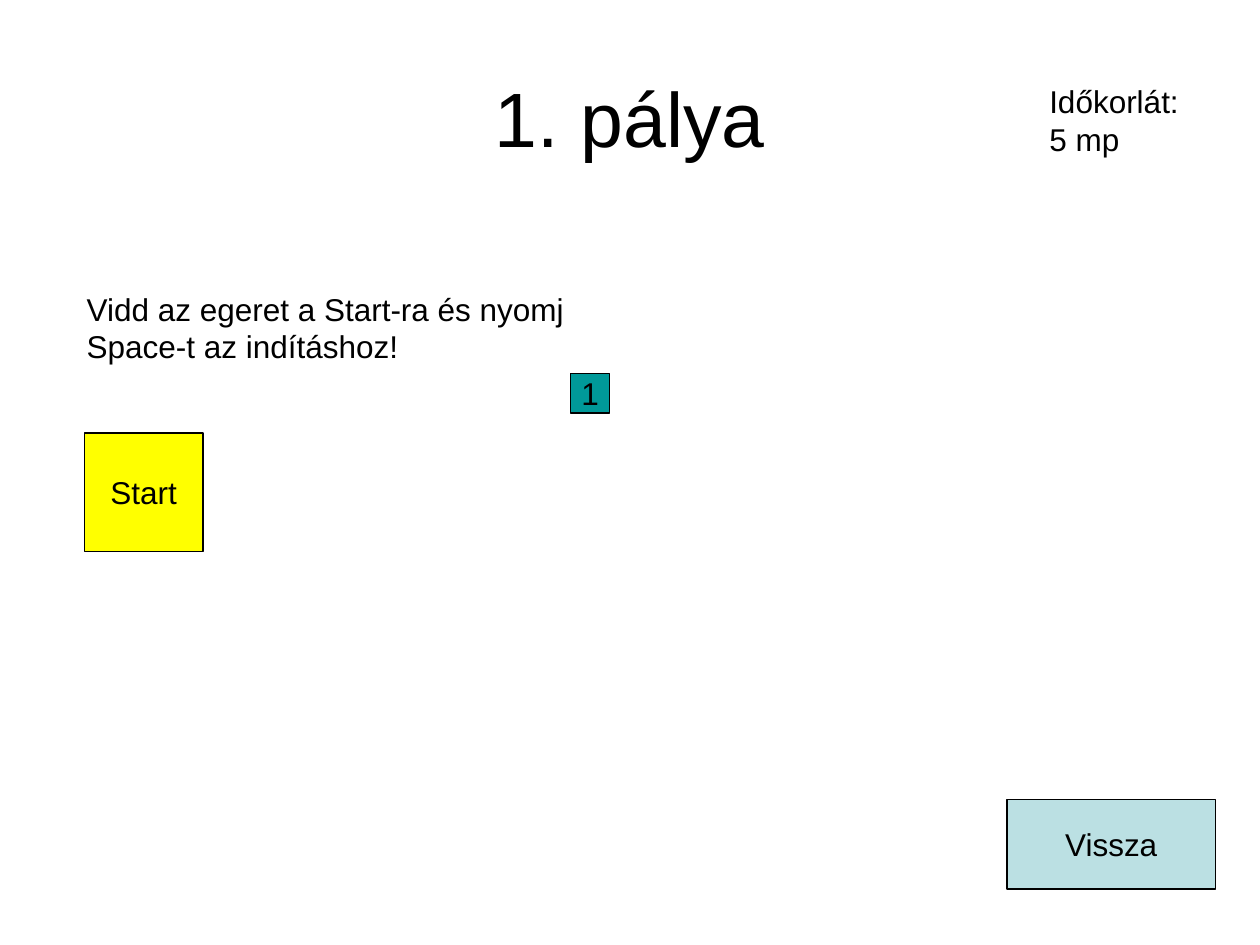
import dataclasses
import typing

import pptx
import pptx.dml.color
import pptx.enum.shapes
import pptx.enum.text
import pptx.util


@dataclasses.dataclass(frozen=True)
class Theme:
    font: str = "Arial"
    title_size: float = 44
    body_size: float = 18
    outline: float = 0.75
    ink: str = "000000"
    paper: str = "FFFFFF"
    start: str = "FFFF00"
    back: str = "BBE0E3"
    target: str = "009999"


class Area(typing.NamedTuple):
    left: float
    top: float
    width: float
    height: float


class Button(typing.NamedTuple):
    label: str
    area: Area
    fill: str


class Caption(typing.NamedTuple):
    lines: tuple[str, ...]
    area: Area
    size: float
    centred: bool = False
    wrap: bool = True


THEME = Theme()
BUTTONS = (
    Button("Start", Area(48.25, 247.5, 67.75, 67.75), THEME.start),
    Button("Vissza", Area(575.5, 457, 119, 51), THEME.back),
    Button("1", Area(326, 213.5, 22.5, 22.5), THEME.target),
)
CAPTIONS = (
    Caption(("1. pálya",), Area(36, 21.6, 648, 90), THEME.title_size, centred=True),
    Caption(("Vidd az egeret a Start-ra és nyomj Space-t az indításhoz!",),
            Area(42.5, 162, 329, 50.5), THEME.body_size),
    Caption(("Időkorlát:", "5 mp"), Area(592.5, 43.2, 89.5, 51),
            THEME.body_size, wrap=False),
)


def colour(value: str) -> pptx.dml.color.RGBColor:
    return pptx.dml.color.RGBColor.from_string(value)


def points(area: Area) -> list[pptx.util.Pt]:
    return [pptx.util.Pt(length) for length in area]


def write_text(box, lines: tuple[str, ...], size: float, centred: bool, wrap: bool) -> None:
    frame = box.text_frame
    anchors = pptx.enum.text.MSO_ANCHOR
    alignments = pptx.enum.text.PP_ALIGN
    frame.word_wrap = wrap
    frame.vertical_anchor = anchors.MIDDLE if centred else anchors.TOP
    font_format = {"name": THEME.font, "size": pptx.util.Pt(size)}
    for index, line in enumerate(lines):
        para = frame.add_paragraph() if index else frame.paragraphs[0]
        para.alignment = alignments.CENTER if centred else alignments.LEFT
        span = para.add_run()
        span.text = line
        for attribute, value in font_format.items():
            setattr(span.font, attribute, value)
        span.font.color.rgb = colour(THEME.ink)


def draw_caption(page, caption: Caption) -> None:
    box = page.shapes.add_textbox(*points(caption.area))
    write_text(box, caption.lines, caption.size, caption.centred, caption.wrap)


def draw_button(page, button: Button) -> None:
    box = page.shapes.add_shape(
        pptx.enum.shapes.MSO_SHAPE.RECTANGLE, *points(button.area))
    box.shadow.inherit = False
    box.fill.solid()
    box.fill.fore_color.rgb = colour(button.fill)
    box.line.color.rgb = colour(THEME.ink)
    box.line.width = pptx.util.Pt(THEME.outline)
    write_text(box, (button.label,), THEME.body_size, centred=True, wrap=False)


def main() -> None:
    deck = pptx.Presentation()
    page_format = {"slide_width": pptx.util.Pt(720), "slide_height": pptx.util.Pt(540)}
    for attribute, value in page_format.items():
        setattr(deck, attribute, value)
    page = deck.slides.add_slide(deck.slide_layouts[6])
    page.background.fill.solid()
    page.background.fill.fore_color.rgb = colour(THEME.paper)
    for caption in CAPTIONS:
        draw_caption(page, caption)
    for button in BUTTONS:
        draw_button(page, button)
    deck.save("out.pptx")


if __name__ == "__main__":
    main()
